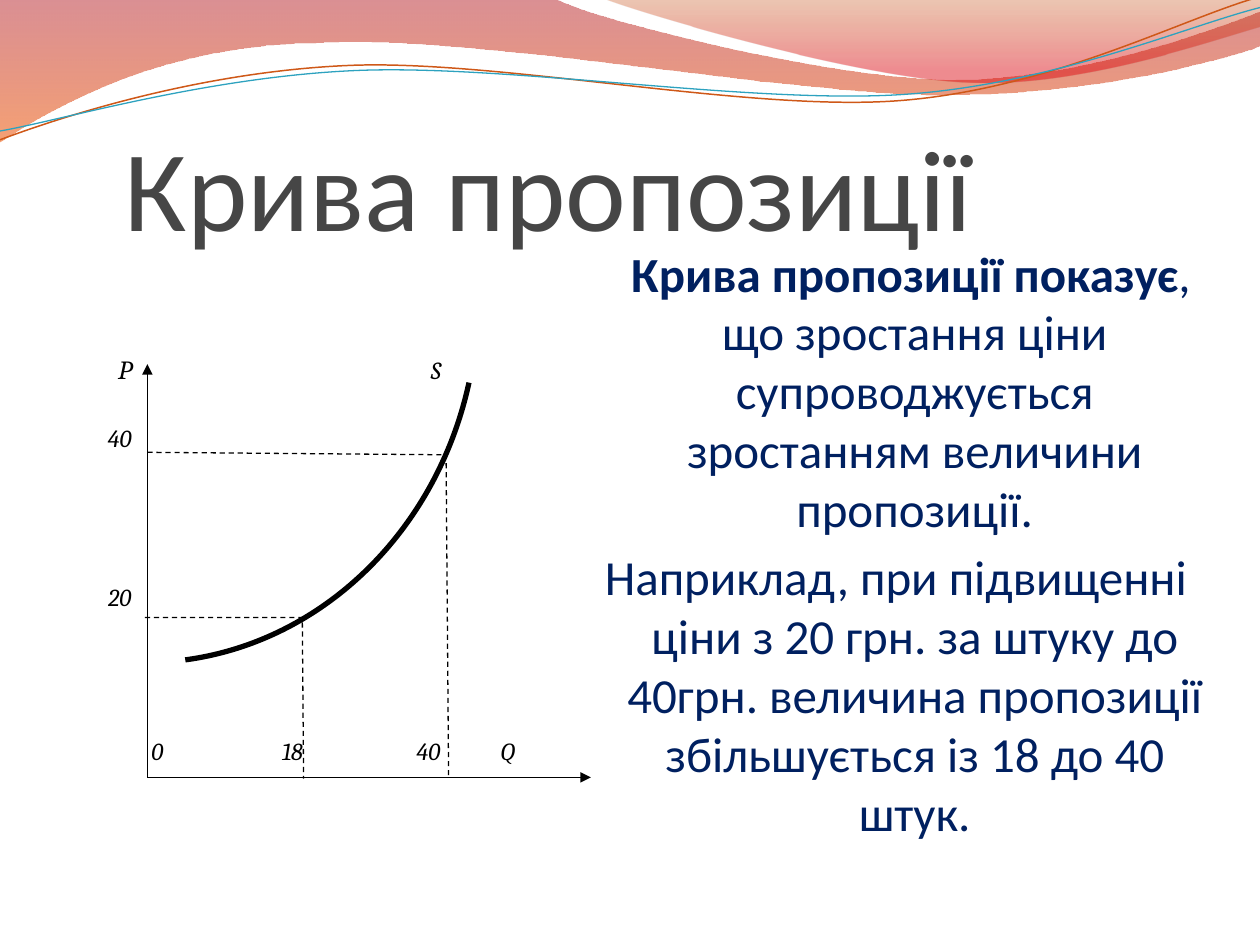
from lxml import etree
from pptx import Presentation
from pptx import util as u
from pptx.dml.color import RGBColor
from pptx.enum import dml, shapes, text
from pptx.oxml import ns

BLACK = RGBColor(0x00, 0x00, 0x00)
TITLE_GREY = RGBColor(0x46, 0x46, 0x46)
NAVY = RGBColor(0x00, 0x20, 0x60)
CRIMSON = RGBColor(0xAF, 0x09, 0x11)
ORANGE = RGBColor(0xEE, 0x53, 0x00)
RUST = RGBColor(0xC2, 0x44, 0x00)
SCARLET = RGBColor(0xDC, 0x00, 0x0B)
WAVE_ORANGE = RGBColor(0xCF, 0x58, 0x18)
WAVE_BLUE = RGBColor(0x2D, 0xA2, 0xBF)

LEFT_BAND = [
    (0, -0.01), (4.4, -0.01),
    (4.76, 0.17, 6.64, 0.63, 7.58, 0.63), (8.53, 0.63, 9.58, 0.26, 10, 0.09),
    (10.01, 0.36),
    (9.83, 0.44, 8.7, 0.76, 7.46, 0.75), (6.22, 0.75, 3.82, 0.28, 2.57, 0.34),
    (1.29, 0.35, 0.46, 0.83, -0.01, 1.13),
]
RIGHT_BAND = [
    (4.79, -0.01),
    (5.09, 0.11, 6.82, 0.62, 7.69, 0.65), (8.56, 0.69, 9.61, 0.32, 10, 0.21),
    (10, 0),
]
ORANGE_WAVE = [
    (0, 1.11), (0.48, 0.93, 1.58, 0.57, 2.77, 0.52),
    (3.95, 0.47, 5.93, 0.89, 7.13, 0.8), (8.33, 0.71, 9.38, 0.15, 9.98, -0.02),
]
BLUE_WAVE = [
    (0, 1.04), (0.47, 0.96, 1.64, 0.61, 2.83, 0.56),
    (4.03, 0.51, 5.97, 0.83, 7.17, 0.75), (8.36, 0.67, 9.41, 0.21, 10, 0.06),
]
LOWER_GUIDE = [(1.15, 4.9), (2.4, 4.9), (2.41, 6.18)]
UPPER_GUIDE = [(1.17, 3.59), (3.54, 3.61), (3.56, 6.16)]

AXIS_ORIGIN = (1.17, 6.17)
AXIS_TIPS = [(1.17, 2.89), (4.69, 6.17)]
LABEL_LEFT = 0.5
LABEL_ROWS = [
    (0, [("Р", 1.0), ("S", 3.46)]),
    (22, [("40", 0.95)]),
    (74, [("20", 0.95)]),
    (71, [("0", 1.25), ("18", 2.32), ("40", 3.4), ("Q", 4.03)]),
]


def add_outline(page, outline, close):
    points = [(u.Inches(step[i]), u.Inches(step[i + 1]))
              for step in outline for i in range(0, len(step), 2)]
    builder = page.shapes.build_freeform(*points[0])
    builder.add_line_segments(points[1:], close=close)
    shape = builder.convert_to_shape()
    shape.shadow.inherit = False
    segments = iter(list(shape._element.iter(ns.qn("a:lnTo"))))
    for step in outline[1:]:
        first = next(segments)
        if len(step) == 6:
            curve = etree.Element(ns.qn("a:cubicBezTo"))
            first.addprevious(curve)
            for segment in (first, next(segments), next(segments)):
                curve.append(segment[0])
                segment.getparent().remove(segment)
    return shape


def add_band(page, outline, stops):
    band = add_outline(page, outline, True)
    band.line.fill.background()
    band.fill.gradient()
    band.fill.gradient_angle = 270
    for stop, (position, color, _) in zip(band.fill.gradient_stops, stops):
        stop.position = position
        stop.color.rgb = color
    for node, (_, _, opacity) in zip(band._element.spPr.iter(ns.qn("a:srgbClr")), stops):
        etree.SubElement(node, ns.qn("a:alpha")).set("val", str(opacity * 1000))


def style_stroke(shape, color, width, dash=None):
    shape.fill.background()
    shape.line.color.rgb = color
    shape.line.width = u.Pt(width)
    if dash:
        shape.line.dash_style = dash


def add_supply_curve(page):
    curve = page.shapes.add_shape(
        shapes.MSO_SHAPE.ARC, *(u.Inches(value) for value in (-1.64, -0.17, 5.67, 5.19)))
    curve.shadow.inherit = False
    curve.rotation = 95.1
    for index, degrees in enumerate((278.5, 349.3)):
        curve.adjustments[index] = degrees * 0.6
    style_stroke(curve, BLACK, 3)


def add_axis(page, start, end):
    axis = page.shapes.add_connector(
        shapes.MSO_CONNECTOR.STRAIGHT, *(u.Inches(value) for value in start + end))
    axis.line.color.rgb = BLACK
    axis.line.width = u.Pt(0.75)
    properties = axis._element.spPr
    line = properties.find(ns.qn("a:ln"))
    etree.SubElement(line, ns.qn("a:tailEnd")).set("type", "triangle")
    etree.SubElement(properties, ns.qn("a:effectLst"))


def add_box(page, left, top, width, height, anchor, margins):
    box = page.shapes.add_textbox(*(u.Inches(value) for value in (left, top, width, height)))
    frame = box.text_frame
    frame.word_wrap = True
    frame.vertical_anchor = anchor
    (frame.margin_left, frame.margin_top,
     frame.margin_right, frame.margin_bottom) = (u.Inches(value) for value in margins)
    return frame


def add_para(frame, index, space):
    para = frame.add_paragraph() if index else frame.paragraphs[0]
    para.space_before = u.Pt(space)
    return para


def add_span(para, words, font, size, color, bold=False, italic=False):
    span = para.add_run()
    span.text = words
    span.font.name = font
    span.font.size = u.Pt(size)
    span.font.color.rgb = color
    span.font.bold = bold
    span.font.italic = italic


def add_labels(page):
    frame = add_box(page, LABEL_LEFT, 2.1, 4.42, 4.85, text.MSO_ANCHOR.TOP, (0, 0.72, 0, 0))
    for index, (space, labels) in enumerate(LABEL_ROWS):
        para = add_para(frame, index, space)
        tabs = etree.SubElement(para._p.get_or_add_pPr(), ns.qn("a:tabLst"))
        for _, center in labels:
            tab = etree.SubElement(tabs, ns.qn("a:tab"))
            tab.set("pos", str(u.Inches(center - LABEL_LEFT)))
            tab.set("algn", "ctr")
        words = "".join("\t" + label for label, _ in labels)
        add_span(para, words, "Cambria", 14, BLACK, italic=True)


def add_title(page):
    frame = add_box(page, 0.5, 0.77, 9, 1.25, text.MSO_ANCHOR.BOTTOM, (0.49, 0.05, 0, 0))
    add_span(frame.paragraphs[0], "Крива пропозиції", "Calibri", 65.7, TITLE_GREY)


def add_explanation(page):
    frame = add_box(page, 4.53, 1.88, 5.16, 5.07, text.MSO_ANCHOR.TOP, (0.1, 0.05, 0.1, 0.05))
    paragraphs = [
        (-0.06, 0, [("Крива пропозиції показує", True),
                    (", що зростання ціни супроводжується зростанням величини пропозиції.",
                     False)]),
        (-0.3, 5.5, [("Наприклад, при підвищенні ціни з 20 грн. за штуку до 40грн. "
                      "величина пропозиції збільшується із 18 до 40 штук.", False)]),
    ]
    for index, (indent, space, spans) in enumerate(paragraphs):
        para = add_para(frame, index, space)
        properties = para._p.get_or_add_pPr()
        properties.set("marL", str(u.Inches(0.3)))
        properties.set("indent", str(u.Inches(indent)))
        para.alignment = text.PP_ALIGN.CENTER
        for words, bold in spans:
            add_span(para, words, "Calibri", 28, NAVY, bold=bold)


def main():
    deck = Presentation()
    deck.slide_width, deck.slide_height = u.Inches(10), u.Inches(7.5)
    page = deck.slides.add_slide(deck.slide_layouts[6])
    add_band(page, LEFT_BAND, [(0, CRIMSON, 45), (1, ORANGE, 55)])
    add_band(page, RIGHT_BAND, [(0, RUST, 30), (0.8, SCARLET, 45)])
    for wave, color, width in ((ORANGE_WAVE, WAVE_ORANGE, 0.85), (BLUE_WAVE, WAVE_BLUE, 0.75)):
        style_stroke(add_outline(page, wave, False), color, width)
    add_title(page)
    add_labels(page)
    add_explanation(page)
    for tip in AXIS_TIPS:
        add_axis(page, AXIS_ORIGIN, tip)
    add_supply_curve(page)
    for guide in (LOWER_GUIDE, UPPER_GUIDE):
        style_stroke(add_outline(page, guide, False), BLACK, 0.75, dml.MSO_LINE.DASH)
    deck.save("out.pptx")


if __name__ == "__main__":
    main()
